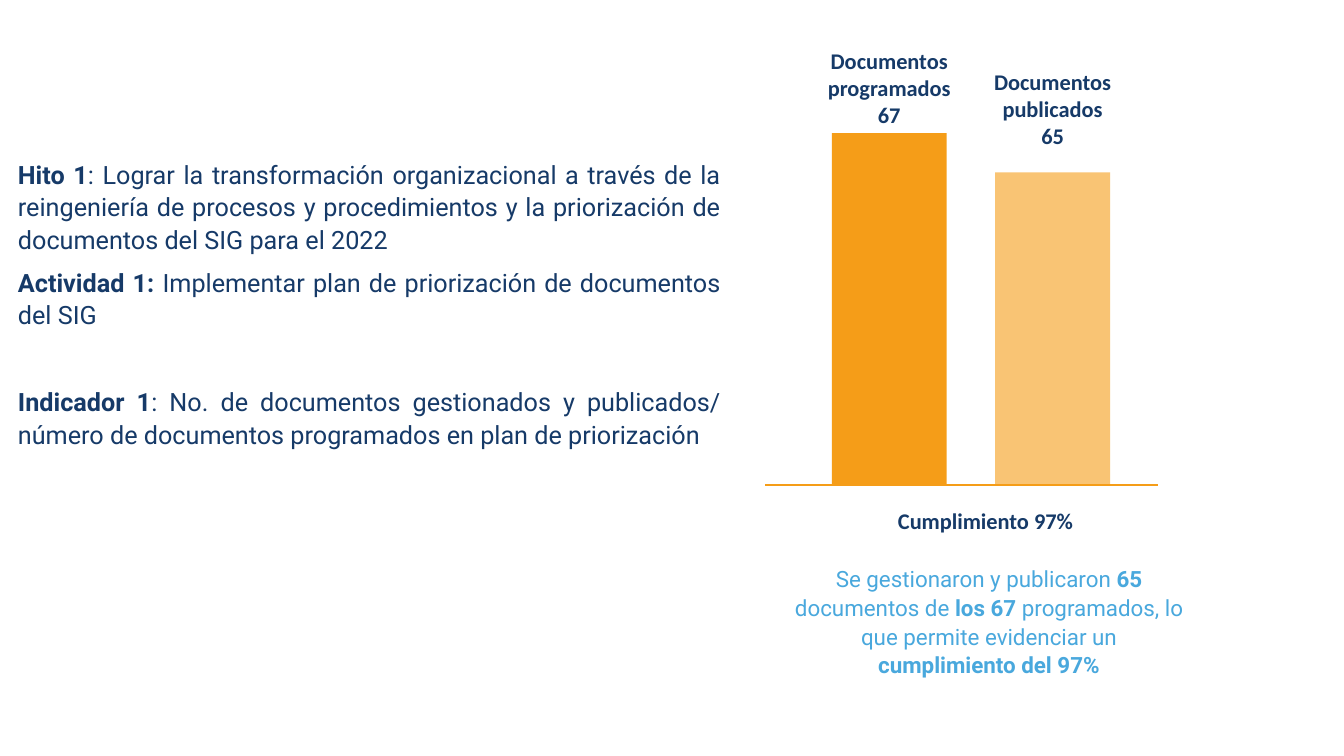
from lxml import etree
from pptx import Presentation
from pptx.dml.color import RGBColor
from pptx.enum.shapes import MSO_CONNECTOR, MSO_SHAPE
from pptx.enum.text import PP_ALIGN
from pptx.oxml.ns import qn
from pptx.util import Inches, Pt

RECT = MSO_SHAPE.RECTANGLE
STRAIGHT = MSO_CONNECTOR.STRAIGHT
CENTER = PP_ALIGN.CENTER
JUSTIFY = PP_ALIGN.JUSTIFY

NAVY, ORANGE, SKY = "163A68", "F59D18", "49A8DD"

# Each paragraph is a list of (text, bold) runs.
GOALS = [
    [("Hito 1", True),
     (": Lograr la transformación organizacional a través de la reingeniería de "
      "procesos y procedimientos y la priorización de documentos del SIG para el 2022", False)],
    [("Actividad 1: ", True),
     ("Implementar plan de priorización de documentos del SIG", False)],
    [("Indicador 1", True),
     (": No. de documentos gestionados y publicados/ número de documentos "
      "programados en plan de priorización", False)],
]
RESULT = [
    [("Se gestionaron y publicaron ", False), ("65 ", True),
     ("documentos de ", False), ("los 67 ", True),
     ("programados, lo que permite evidenciar un ", False),
     ("cumplimiento del 97%", True)],
]
# Label lines, bar left, bar top, label top, opacity in percent
BARS = [
    (("Documentos", "programados", "67"), 0.66, 0.9, 0, 100),
    (("Documentos", "publicados", "65"), 2.28, 1.29, 0.21, 60),
]


def rgb(color):
    return RGBColor.from_string(color)


def add_text(slide, box, paragraphs, size, color, font="Roboto", align=CENTER,
             line_spacing=1.0, after=0, right_inset=0.1):
    tb = slide.shapes.add_textbox(*map(Inches, box))
    tf = tb.text_frame
    tf.word_wrap = True
    tf.margin_right = Inches(right_inset)
    for i, runs in enumerate(paragraphs):
        p = tf.add_paragraph() if i else tf.paragraphs[0]
        p.alignment = align
        p.line_spacing = line_spacing
        p.space_after = Pt(after)
        for text, bold in runs:
            r = p.add_run()
            r.text = text
            r.font.name = font
            r.font.size = Pt(size)
            r.font.bold = bold
            r.font.color.rgb = rgb(color)
    return tf


def add_label(slide, box, lines):
    add_text(slide, box, [[(line, True)] for line in lines], 16, NAVY, font="Calibri")


def add_bar(slide, box, opacity):
    sp = slide.shapes.add_shape(RECT, *map(Inches, box))
    sp.shadow.inherit = False
    sp.line.fill.background()
    sp.fill.solid()
    sp.fill.fore_color.rgb = rgb(ORANGE)
    if opacity < 100:
        fill = sp.fill._xPr.find(qn("a:solidFill"))
        etree.SubElement(fill[0], qn("a:alpha"), val=str(opacity * 1000))


def add_baseline(slide, x, y, width):
    line = slide.shapes.add_connector(
        STRAIGHT, Inches(x), Inches(y), Inches(x + width), Inches(y))
    line.line.color.rgb = rgb(ORANGE)
    line.line.width = Pt(1)
    etree.SubElement(line._element.spPr, qn("a:effectLst"))


def add_goals(slide, box):
    tf = add_text(slide, box, GOALS, 18, NAVY, align=JUSTIFY,
                  line_spacing=1.07, after=8, right_inset=1.1)
    tf.paragraphs[-1].space_before = Pt(31)


def add_compliance(slide, x, y, width, height):
    """Draw the two labelled bars on their baseline, with the rate below."""
    bar_w, label_w = 1.14, 2.92
    base = y + height
    for lines, left, top, label_top, opacity in BARS:
        add_bar(slide, (x + left, y + top, bar_w, height - top), opacity)
        label_x = x + left + (bar_w - label_w) / 2
        add_label(slide, (label_x, y + label_top, label_w, 0.91), lines)
    add_baseline(slide, x, base, width)
    add_label(slide, (x + 0.95, base + 0.17, 2.47, 0.37), ["Cumplimiento 97%"])


def add_result(slide, box):
    add_text(slide, box, RESULT, 16, SKY, line_spacing=1.07, after=8, right_inset=1.1)


def main():
    prs = Presentation()
    prs.slide_width, prs.slide_height = Inches(13.33), Inches(7.5)
    slide = prs.slides.add_slide(prs.slide_layouts[6])
    add_goals(slide, (0.08, 1.51, 8.17, 3))
    add_compliance(slide, 7.59, 0.42, 3.9, 4.39)
    add_result(slide, (7.74, 5.54, 5.14, 1.24))
    prs.save("out.pptx")


if __name__ == "__main__":
    main()
